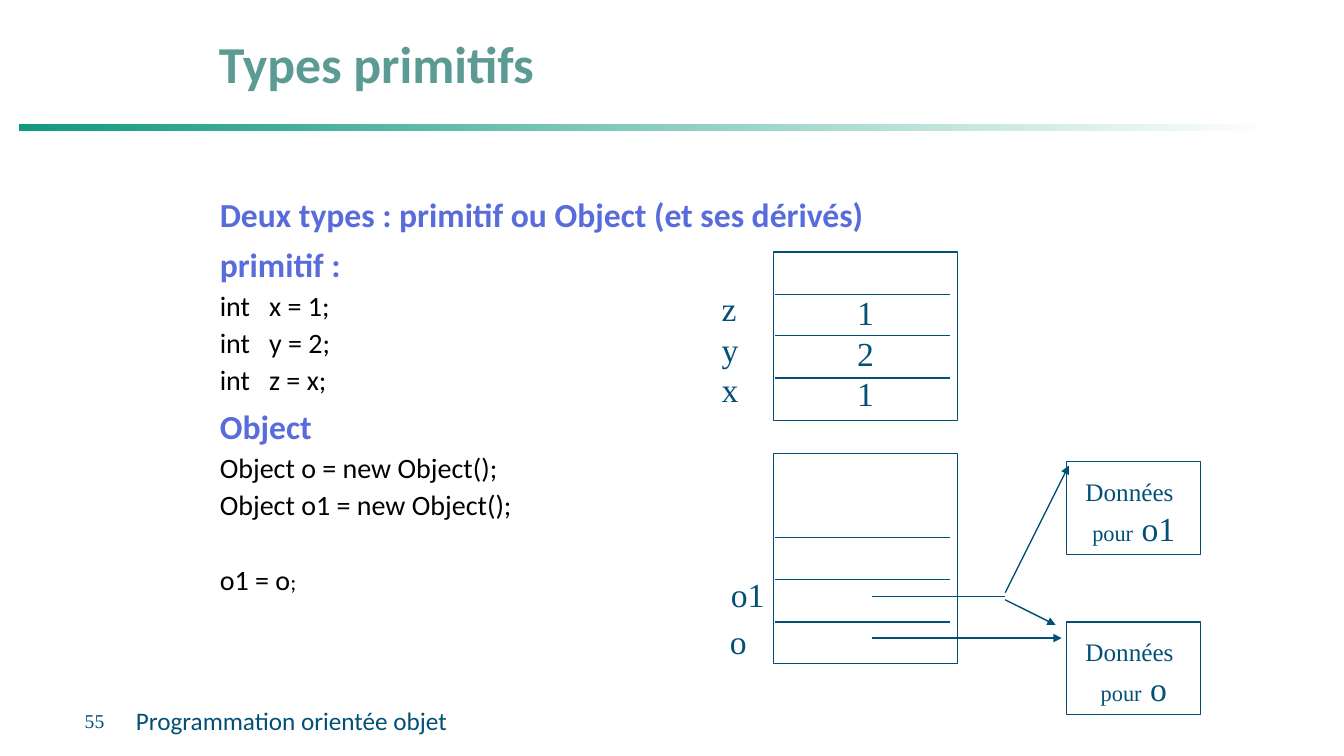
from lxml import etree
from pptx import Presentation
from pptx.dml.color import RGBColor
from pptx.enum.shapes import MSO_CONNECTOR, MSO_SHAPE
from pptx.enum.text import MSO_ANCHOR, MSO_AUTO_SIZE, PP_ALIGN
from pptx.oxml.ns import qn
from pptx.util import Inches, Pt

STRAIGHT = MSO_CONNECTOR.STRAIGHT
RECTANGLE = MSO_SHAPE.RECTANGLE
TOP, MIDDLE, BOTTOM = MSO_ANCHOR.TOP, MSO_ANCHOR.MIDDLE, MSO_ANCHOR.BOTTOM
NO_FIT = MSO_AUTO_SIZE.NONE
LEFT, CENTER = PP_ALIGN.LEFT, PP_ALIGN.CENTER

COLORS = {
    "ink": "035077",
    "title": "5B9B93",
    "heading": "586CDC",
    "code": "000000",
    "bar": "119A7E",
    "white": "FFFFFF",
}
SANS, SERIF = "Calibri", "Times New Roman"


def color(name):
    return RGBColor.from_string(COLORS[name])


class SlideBuilder:
    def __init__(self, page):
        self.page = page

    def style(self, font, size, name="ink", face=SERIF, bold=False):
        font.size, font.name, font.bold = Pt(size), face, bold
        font.color.rgb = color(name)

    def place(self, shape, left, top, width, height):
        shape.left, shape.top = Inches(left), Inches(top)
        shape.width, shape.height = Inches(width), Inches(height)

    def frame(self, shape, anchor, margins=(0.1, 0.05, 0.1, 0.05), wrap=True):
        frame = shape.text_frame
        frame.auto_size, frame.word_wrap = NO_FIT, wrap
        frame.vertical_anchor = anchor
        (frame.margin_left, frame.margin_top,
         frame.margin_right, frame.margin_bottom) = map(Inches, margins)
        return frame

    def paragraphs(self, frame, lines):
        for index, line in enumerate(lines):
            para = frame.paragraphs[0] if index == 0 else frame.add_paragraph()
            yield para, line

    def title(self, text):
        shape = self.page.shapes.title
        self.place(shape, 2.17, 0.33, 8.95, 0.67)
        para = self.frame(shape, MIDDLE, (0, 0, 0, 0)).paragraphs[0]
        para.text, para.alignment, para.line_spacing = text, LEFT, 0.9
        self.style(para.font, 37, "title", SANS, True)

    def body(self, lines):
        """Each line is (level, space before, text)."""
        shape = self.page.placeholders[1]
        self.place(shape, 2.08, 1.92, 7.97, 5.25)
        for para, (level, space, text) in self.paragraphs(self.frame(shape, TOP), lines):
            para.text, para.level = text, level
            para.line_spacing, para.space_before = 0.9, Pt(space)
            properties = para._p.get_or_add_pPr()
            properties.set("marL", "0")
            properties.set("indent", "0")
            etree.SubElement(properties, qn("a:buNone"))
            if level:
                self.style(para.font, 20, "code", SANS)
            else:
                self.style(para.font, 24, "heading", SANS, True)
        return shape.text_frame

    def label(self, lines, left, top, width, height, size=24, face=SERIF,
              anchor=TOP, margin_left=0.1):
        box = self.page.shapes.add_textbox(0, 0, 0, 0)
        self.place(box, left, top, width, height)
        frame = self.frame(box, anchor, (margin_left, 0.05, 0.1, 0.05))
        for para, text in self.paragraphs(frame, lines):
            para.text = text
            self.style(para.font, size, face=face)

    def box(self, left, top, width, height):
        box = self.page.shapes.add_shape(RECTANGLE, 0, 0, 0, 0)
        self.place(box, left, top, width, height)
        box.shadow.inherit = False
        box.fill.solid()
        box.fill.fore_color.rgb = color("white")
        box.line.color.rgb = color("ink")
        box.line.width = Pt(1)
        return box

    def gradient_bar(self, left, top, width, height):
        bar = self.box(left, top, width, height)
        bar.line.fill.background()
        bar.fill.gradient()
        bar.fill.gradient_angle = 0
        for stop, name, position in zip(bar.fill.gradient_stops, ("bar", "white"), (0, 1)):
            stop.color.rgb, stop.position = color(name), position

    def line(self, start, end, arrow=False):
        line = self.page.shapes.add_connector(STRAIGHT, *map(Inches, start + end))
        line.line.color.rgb = color("ink")
        line.line.width = Pt(1)
        if arrow:
            etree.SubElement(line.line._get_or_add_ln(), qn("a:tailEnd"), type="triangle")
        etree.SubElement(line._element.spPr, qn("a:effectLst"))

    def stack(self, top, height, dividers, values=()):
        """Memory stack, with its values written from the bottom up."""
        box = self.box(7.67, top, 1.83, height)
        frame = self.frame(box, BOTTOM, (0.1, 0.05, 0.1, 0.07), wrap=False)
        for para, value in self.paragraphs(frame, values):
            para.text, para.alignment = value, CENTER
            self.style(para.font, 24)
        for y in dividers:
            self.line((7.69, y), (9.42, y))

    def data_box(self, top, variable):
        box = self.box(10.58, top, 1.33, 0.92)
        lines = [[("Données", 18), (" ", 24)], [("pour", 16), (" " + variable, 24)]]
        for para, spans in self.paragraphs(self.frame(box, MIDDLE, wrap=False), lines):
            para.alignment = CENTER
            for text, size in spans:
                span = para.add_run()
                span.text = text
                self.style(span.font, size)


def main():
    deck = Presentation()
    deck.slide_width, deck.slide_height = Inches(13.33), Inches(7.5)
    slide = SlideBuilder(deck.slides.add_slide(deck.slide_layouts[1]))

    # Title and list
    slide.gradient_bar(0.19, 1.23, 12.46, 0.07)
    slide.title("Types primitifs")
    body = slide.body([
        (0, 0, "Deux types : primitif ou Object (et ses dérivés)"),
        (0, 10, "primitif :"),
        (1, 5, "int   x = 1;"),
        (1, 5, "int   y = 2;"),
        (1, 5, "int   z = x;"),
        (0, 10, "Object"),
        (1, 5, "Object o = new Object();"),
        (1, 5, "Object o1 = new Object();"),
        (1, 32, "o1 = o"),
    ])
    semicolon = body.paragraphs[-1].add_run()
    semicolon.text = ";"
    semicolon.font.size = Pt(16)

    # Stack of primitive values
    slide.stack(2.5, 1.67, (2.92, 3.33, 3.75), "121")
    slide.label("zyx", 7.06, 2.81, 0.36, 1.31)

    # Stack of references and the data they point to
    slide.stack(4.5, 2.08, (5.33, 5.75, 6.17))
    slide.label(["o1"], 7.15, 5.64, 0.54, 0.5)
    slide.label(["o"], 7.14, 6.11, 0.37, 0.5)
    slide.data_box(4.58, "o1")
    slide.data_box(6.17, "o")
    slide.line((8.65, 6.33), (10.53, 6.33), arrow=True)
    slide.line((8.65, 5.92), (9.97, 5.92))
    slide.line((9.97, 5.95), (10.47, 6.2), arrow=True)
    slide.line((9.97, 5.88), (10.6, 4.62), arrow=True)

    # Footer
    slide.label(["55"], 0.84, 6.95, 0.31, 0.4, 14, anchor=MIDDLE, margin_left=0)
    slide.label(["Programmation orientée objet"], 1.25, 6.95, 4.5, 0.4, 18, SANS)

    deck.save("out.pptx")


if __name__ == "__main__":
    main()
